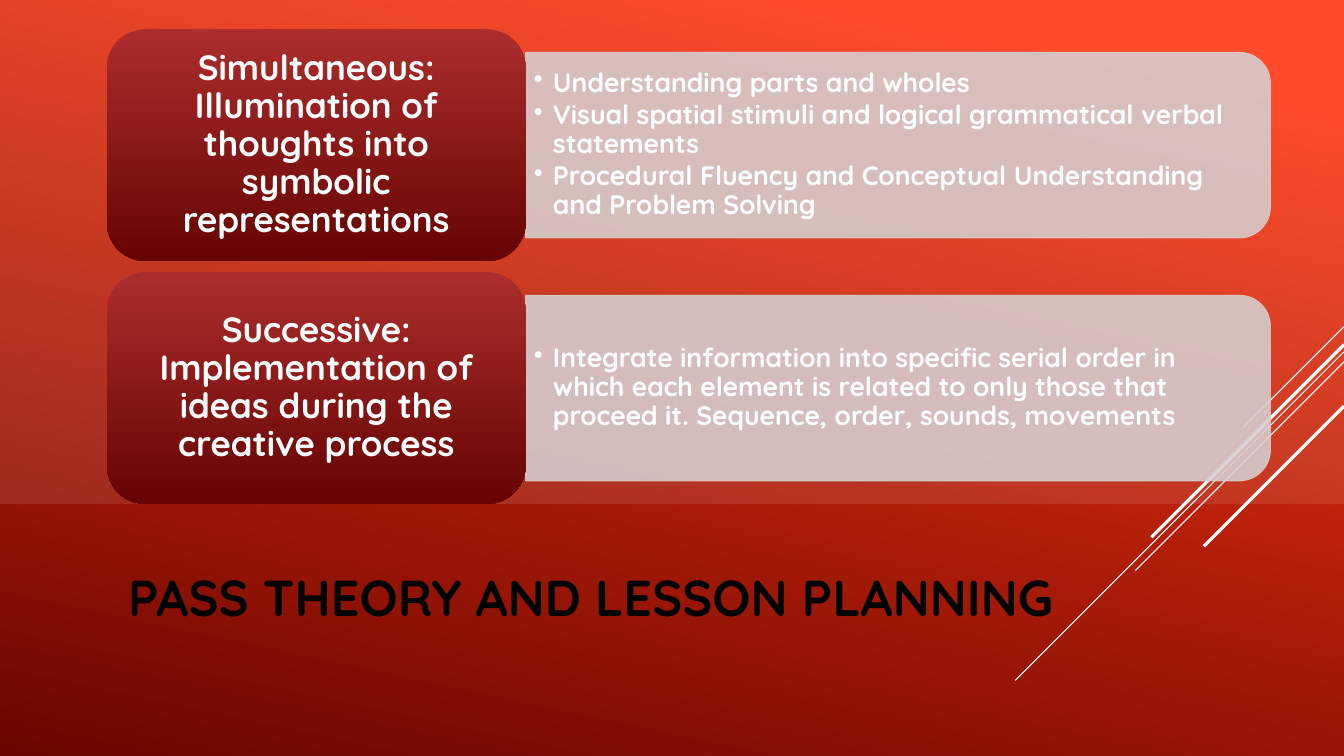
from lxml.etree import SubElement
from pptx import Presentation
from pptx.dml.color import RGBColor
from pptx.enum.shapes import MSO_CONNECTOR, MSO_SHAPE
from pptx.enum.text import MSO_ANCHOR, MSO_AUTO_SIZE, PP_ALIGN
from pptx.oxml.ns import qn
from pptx.util import Inches, Pt

WIDE, HIGH = 13.33, 7.5
FONT = "Quicksand"
WHITE = RGBColor(0xFF, 0xFF, 0xFF)
BLACK = RGBColor(0x00, 0x00, 0x00)
FLAME = RGBColor(0xFF, 0x37, 0x12)
EMBER = RGBColor(0x6A, 0x06, 0x00)
ROSE = RGBColor(0xAC, 0x2D, 0x2D)
WINE = RGBColor(0x65, 0x05, 0x03)
ASH = RGBColor(0xD6, 0xCC, 0xCC)

# Each ray falls at 45 degrees from the right edge: top, reach, weight
RAYS = [(3.24, 1, 0.75), (3.49, 3.26, 0.75), (3.59, 2.07, 0.75),
        (3.42, 1.91, 2.25), (4.03, 1.39, 2.25)]
ROWS = [
    ("Simultaneous: Illumination of thoughts into symbolic representations",
     ["Understanding parts and wholes",
      "Visual spatial stimuli and logical grammatical verbal statements",
      "Procedural Fluency and Conceptual Understanding and Problem Solving"]),
    ("Successive: Implementation of ideas during the creative process",
     ["Integrate information into specific serial order in which each element "
      "is related to only those that proceed it. Sequence, order, sounds, "
      "movements"]),
]


def inch(*sizes):
    return [Inches(size) for size in sizes]


def blend(fill, start, end, first, angle):
    """Fill with two colours; the angle turns clockwise."""
    fill.gradient()
    fill.gradient_angle = 360 - angle
    for stop, color, place in zip(fill.gradient_stops, (start, end), (first, 1)):
        stop.color.rgb = color
        stop.position = place


def fade(format, share):
    """Set the opacity of a solid fill or line."""
    for color in format._xPr.iter(qn("a:srgbClr")):
        SubElement(color, qn("a:alpha"), val=str(int(share * 100000)))


def style(para, size, color):
    font = para.font
    font.name, font.size, font.bold = FONT, Pt(size), True
    font.color.rgb = color


def frame(shape, side, end):
    text = shape.text_frame
    text.word_wrap = True
    text.auto_size = MSO_AUTO_SIZE.NONE
    text.vertical_anchor = MSO_ANCHOR.MIDDLE
    text.margin_left = text.margin_right = Inches(side)
    text.margin_top = text.margin_bottom = Inches(end)
    return text


def add_block(slide, kind, box):
    block = slide.shapes.add_shape(kind, *inch(*box))
    block.shadow.inherit = False
    block.line.fill.background()
    return block


def add_rays(slide):
    for top, reach, weight in RAYS:
        ray = slide.shapes.add_connector(
            MSO_CONNECTOR.STRAIGHT,
            *inch(WIDE, top, WIDE - reach, top + reach))
        ray.line.color.rgb = WHITE
        ray.line.width = Pt(weight)
        SubElement(ray._element.spPr, qn("a:effectLst"))


def add_title(slide, box):
    title = slide.shapes.title
    title.left, title.top, title.width, title.height = inch(*box)
    text = frame(title, 0.1, 0.05)
    text.text = "PASS THEORY AND LESSON PLANNING"
    para = text.paragraphs[0]
    para.alignment = PP_ALIGN.LEFT
    style(para, 36, BLACK)


def add_veil(slide, box):
    veil = add_block(slide, MSO_SHAPE.RECTANGLE, box)
    veil.fill.solid()
    veil.fill.fore_color.rgb = WHITE
    fade(veil.fill, 0.1)


def add_bar(slide, box):
    """Draw a bar whose right corners are round, by a quarter turn."""
    left, top, wide, high = box
    shift = (wide - high) / 2
    bar = add_block(slide, MSO_SHAPE.ROUND_2_SAME_RECTANGLE,
                    (left + shift, top - shift, high, wide))
    bar.rotation = 90
    bar.fill.solid()
    bar.fill.fore_color.rgb = ASH
    fade(bar.fill, 0.9)
    bar.line.color.rgb = ASH
    bar.line.width = Pt(0.75)
    fade(bar.line.fill, 0.9)


def add_list(slide, box, items):
    text = frame(slide.shapes.add_textbox(*inch(*box)), 0.08, 0.04)
    for index, item in enumerate(items):
        para = text.add_paragraph() if index else text.paragraphs[0]
        para.text = item
        para.line_spacing = 0.9
        para.space_after = Pt(2.5)
        props = para._p.get_or_add_pPr()
        indent = Inches(0.19)
        props.set("marL", str(indent))
        props.set("indent", str(-indent))
        SubElement(props, qn("a:buChar"), char="•")
        style(para, 19, WHITE)


def add_label(slide, box, words):
    label = add_block(slide, MSO_SHAPE.ROUNDED_RECTANGLE, box)
    blend(label.fill, ROSE, WINE, 0, 90)
    text = frame(label, 0.1, 0.05)
    text.text = words
    para = text.paragraphs[0]
    para.alignment = PP_ALIGN.CENTER
    para.line_spacing = 0.9
    style(para, 25, WHITE)


def add_row(slide, box, words, items):
    left, top, wide, high = box
    split = 0.36 * wide
    start, rest = left + split, wide - split
    add_bar(slide, (start, top + 0.1 * high, rest, 0.8 * high))
    add_list(slide, (start, top + 0.14 * high, rest - 0.09, 0.72 * high), items)
    add_label(slide, (left, top, split, high), words)


def main():
    deck = Presentation()
    deck.slide_width, deck.slide_height = inch(WIDE, HIGH)
    slide = deck.slides.add_slide(deck.slide_layouts[5])
    blend(slide.background.fill, FLAME, EMBER, 0.1, 102)
    add_rays(slide)
    add_title(slide, (1.17, 5.29, 10.14, 1.26))
    add_veil(slide, (0, 0, WIDE, HIGH * 2 / 3))
    for index, (words, items) in enumerate(ROWS):
        add_row(slide, (1.06, 0.29 + index * 2.41, 11.54, 2.3), words, items)
    deck.save("out.pptx")


if __name__ == "__main__":
    main()
